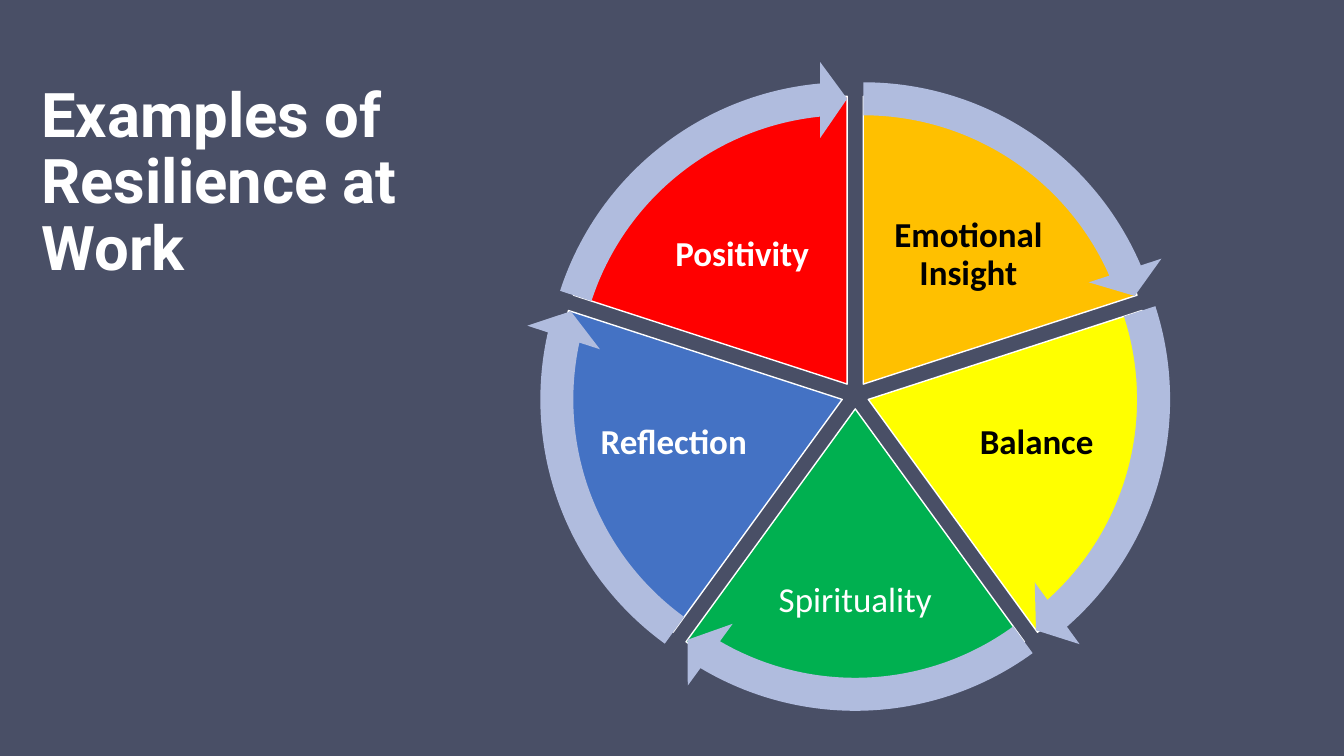
from math import cos, radians, sin

from pptx import Presentation
from pptx.dml.color import RGBColor
from pptx.enum import shapes, text
from pptx.util import Pt

NAVY = RGBColor(0x49, 0x4F, 0x66)
LILAC = RGBColor(0xB0, 0xBC, 0xDE)
WHITE = RGBColor(0xFF, 0xFF, 0xFF)
BLACK = RGBColor(0, 0, 0)
GOLD = RGBColor(0xFF, 0xC0, 0x00)
YELLOW = RGBColor(0xFF, 0xFF, 0x00)
GREEN = RGBColor(0x00, 0xB0, 0x50)
BLUE = RGBColor(0x44, 0x72, 0xC4)
RED = RGBColor(0xFF, 0x00, 0x00)

TITLE = "Examples of Resilience at Work"
# label, fill, font colour, bold, label centre from wheel centre, label size
SLICES = [
    ("Emotional Insight", GOLD, BLACK, True, (80.8, -100), (131.8, 87.8)),
    ("Balance", YELLOW, BLACK, True, (129.6, 34.5), (122.4, 97.9)),
    ("Spirituality", GREEN, WHITE, False, (0, 147), (117.4, 108)),
    ("Reflection", BLUE, WHITE, True, (-129.6, 34.5), (122.4, 97.9)),
    ("Positivity", RED, WHITE, True, (-80.8, -100), (131.8, 87.8)),
]
MID_X, MID_Y = 610.9, 282.3
PIE, RING = 411.1, 462.2
PUSH = 9.8             # how far each slice sits from the wheel centre
STEP = 360 / len(SLICES)
SWEEP = 66.54          # degrees covered by an arrow, up to its head
UNIT = 0.6             # adjustment value per degree


def box(x, y, w, h):
    """Left, top, width and height of a box centred on x, y."""
    return Pt(x - w / 2), Pt(y - h / 2), Pt(w), Pt(h)


def turn(angle):
    return angle % 360 * UNIT


def add_part(group, kind, x, y, size, fill, adjust):
    part = group.shapes.add_shape(kind, *box(x, y, size, size))
    part.shadow.inherit = False
    part.fill.solid()
    part.fill.fore_color.rgb = fill
    part.line.fill.background()
    for i, value in enumerate(adjust):
        part.adjustments[i] = value
    return part


def write(frame, words, font, size, color, bold, align):
    frame.word_wrap = True
    frame.auto_size = text.MSO_AUTO_SIZE.NONE
    frame.vertical_anchor = text.MSO_ANCHOR.MIDDLE
    para = frame.paragraphs[0]
    para.alignment = align
    para.line_spacing = 0.9
    run = para.add_run()
    run.text = words
    run.font.name = font
    run.font.size = Pt(size)
    run.font.bold = bold
    run.font.color.rgb = color


deck = Presentation()
deck.slide_width, deck.slide_height = Pt(960), Pt(540)
slide = deck.slides.add_slide(deck.slide_layouts[5])
slide.background.fill.solid()
slide.background.fill.fore_color.rgb = NAVY

title = slide.shapes.title
title.left, title.top, title.width, title.height = Pt(22.3), Pt(38.9), Pt(324), Pt(185)
write(title.text_frame, TITLE, "Roboto", 44, WHITE, True, text.PP_ALIGN.LEFT)

wheel = slide.shapes.add_group_shape()
spots = []
for i, (label, fill, color, bold, (dx, dy), size) in enumerate(SLICES):
    start = 270 + STEP * i
    mid = radians(start + STEP / 2)
    x, y = MID_X + PUSH * cos(mid), MID_Y + PUSH * sin(mid)
    spots.append((start, x, y))
    pie = add_part(wheel, shapes.MSO_SHAPE.PIE, x, y, PIE, fill,
                   (turn(start), turn(start + STEP)))
    pie.line.color.rgb = WHITE
    pie.line.width = Pt(1)
    note = wheel.shapes.add_textbox(*box(MID_X + dx, MID_Y + dy, *size))
    frame = note.text_frame
    frame.margin_left = frame.margin_right = Pt(2.5)
    frame.margin_top = frame.margin_bottom = Pt(2.5)
    write(frame, label, "Calibri", 25, color, bold, text.PP_ALIGN.CENTER)

for start, x, y in spots:
    add_part(wheel, shapes.MSO_SHAPE.CIRCULAR_ARROW, x, y, RING, LILAC,
             (0.051, 3.275, turn(start + SWEEP), turn(start), 0.059))

deck.save("out.pptx")
